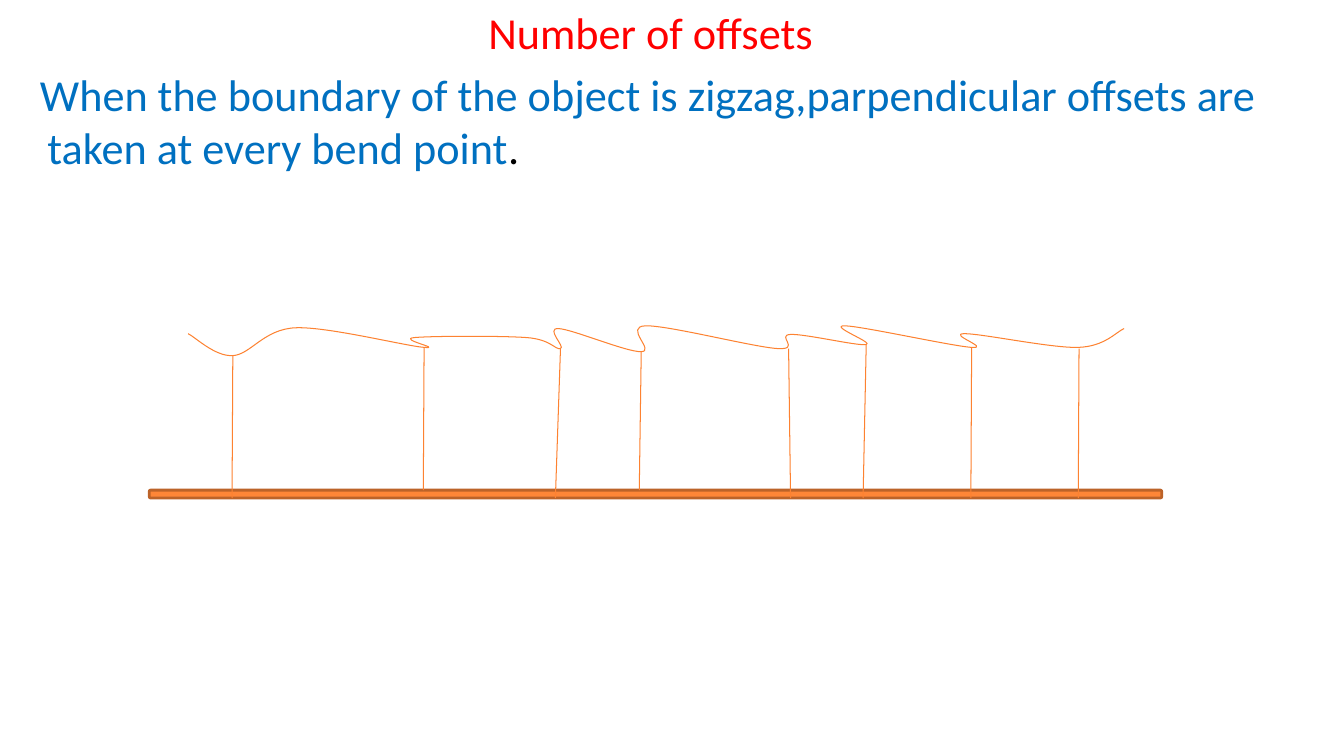
from lxml import etree
from pptx import Presentation
from pptx.dml.color import RGBColor
from pptx.enum.shapes import MSO_CONNECTOR, MSO_SHAPE
from pptx.enum.text import PP_ALIGN
from pptx.oxml.ns import qn
from pptx.util import Cm, Pt

ROUNDED = MSO_SHAPE.ROUNDED_RECTANGLE
STRAIGHT = MSO_CONNECTOR.STRAIGHT
LEFT = PP_ALIGN.LEFT

RED = RGBColor(0xFF, 0x00, 0x00)
BLUE = RGBColor(0x00, 0x70, 0xC0)
BLACK = RGBColor(0x00, 0x00, 0x00)
ORANGE = RGBColor(0xFE, 0x86, 0x37)
ORANGE_LINE = RGBColor(0xFD, 0x82, 0x31)
ORANGE_EDGE = RGBColor(0xBC, 0x63, 0x29)

BOUNDARY_BENDS = [
    (4.8, 8.51), (5.94, 9.07), (7.54, 8.36), (10.82, 8.86), (10.57, 8.61),
    (13.44, 8.61), (14.3, 8.89), (14.25, 8.38), (16.36, 8.97), (16.48, 8.31),
    (19.84, 8.89), (20.17, 8.53), (22.1, 8.79), (21.56, 8.31), (24.79, 8.86),
    (24.61, 8.51), (27.51, 8.86), (28.68, 8.38),
]
OFFSETS = [
    ((22.1, 8.79), (22.02, 12.7)),
    ((24.79, 8.86), (24.77, 12.7)),
    ((20.12, 8.89), (20.17, 12.7)),
    ((16.36, 8.97), (16.31, 12.5)),
    ((10.82, 8.86), (10.8, 12.5)),
    ((14.3, 8.89), (14.17, 12.7)),
    ((5.94, 9.07), (5.92, 12.7)),
    ((27.51, 12.7), (27.53, 8.89)),
]
PARAGRAPHS = [
    ([("Number of offsets", RED)],
     {"alignment": LEFT}, 12.21, 0),
    ([("When the boundary of the object is zigzag,parpendicular offsets are "
       "taken at every bend point", BLUE), (".", BLACK)],
     {"alignment": LEFT, "space_before": Pt(6.4)}, 0.96, -0.19),
]


def control_points(before, start, end, after):
    first = [b + (c - a) / 6 for a, b, c in zip(before, start, end)]
    second = [c - (d - b) / 6 for b, c, d in zip(start, end, after)]
    return first, second


class OffsetSlide:
    font_format = {"name": "Calibri", "size": Pt(32)}
    thin_line = Pt(0.75)

    def __init__(self, presentation):
        self.slide = presentation.slides.add_slide(presentation.slide_layouts[6])
        self.shapes = self.slide.shapes

    def set_line(self, shape, color, width):
        shape.line.color.rgb = color
        shape.line.width = width

    def text(self, left, top, width, height, paragraphs):
        frame = self.shapes.add_textbox(Cm(left), Cm(top), Cm(width), Cm(height)).text_frame
        frame.word_wrap = True
        for index, (runs, formats, margin, indent) in enumerate(paragraphs):
            paragraph = frame.add_paragraph() if index else frame.paragraphs[0]
            for name, value in formats.items():
                setattr(paragraph, name, value)
            properties = paragraph._p.get_or_add_pPr()
            properties.set("marL", str(Cm(margin)))
            properties.set("indent", str(Cm(indent)))
            for wording, color in runs:
                run = paragraph.add_run()
                run.text = wording
                run.font.color.rgb = color
                for name, value in self.font_format.items():
                    setattr(run.font, name, value)

    def boundary(self, bends):
        points = [(Cm(x), Cm(y)) for x, y in bends]
        builder = self.shapes.build_freeform(*points[0])
        builder.add_line_segments(points[1:], close=False)
        shape = builder.convert_to_shape()
        shape.shadow.inherit = False
        shape.fill.background()
        self.set_line(shape, ORANGE_LINE, self.thin_line)
        self.round_bends(shape)

    def round_bends(self, shape):
        geometry = shape._element.spPr
        points = [(int(point.get("x")), int(point.get("y")))
                  for point in geometry.iter(qn("a:pt"))]
        padded = [points[0], *points, points[-1]]
        segments = list(geometry.iter(qn("a:lnTo")))
        for index, segment in enumerate(segments):
            curve = etree.Element(qn("a:cubicBezTo"))
            for x, y in control_points(*padded[index:index + 4]):
                etree.SubElement(curve, qn("a:pt"), x=str(round(x)), y=str(round(y)))
            curve.append(segment[0])
            segment.getparent().replace(segment, curve)

    def chain_line(self, left, top, width, height):
        shape = self.shapes.add_shape(ROUNDED, Cm(left), Cm(top), Cm(width), Cm(height))
        shape.shadow.inherit = False
        shape.fill.solid()
        shape.fill.fore_color.rgb = ORANGE
        self.set_line(shape, ORANGE_EDGE, Pt(2))

    def offset(self, start, end):
        connector = self.shapes.add_connector(STRAIGHT, *map(Cm, start + end))
        self.set_line(connector, ORANGE_LINE, self.thin_line)
        etree.SubElement(connector._element.spPr, qn("a:effectLst"))


def main():
    presentation = Presentation()
    presentation.slide_width = Cm(34.29)
    presentation.slide_height = Cm(19.05)
    page = OffsetSlide(presentation)
    page.text(0, 0, 34.29, 19.05, PARAGRAPHS)
    page.boundary(BOUNDARY_BENDS)
    page.chain_line(3.81, 12.5, 25.83, 0.2)
    for start, end in OFFSETS:
        page.offset(start, end)
    presentation.save("out.pptx")


if __name__ == "__main__":
    main()
